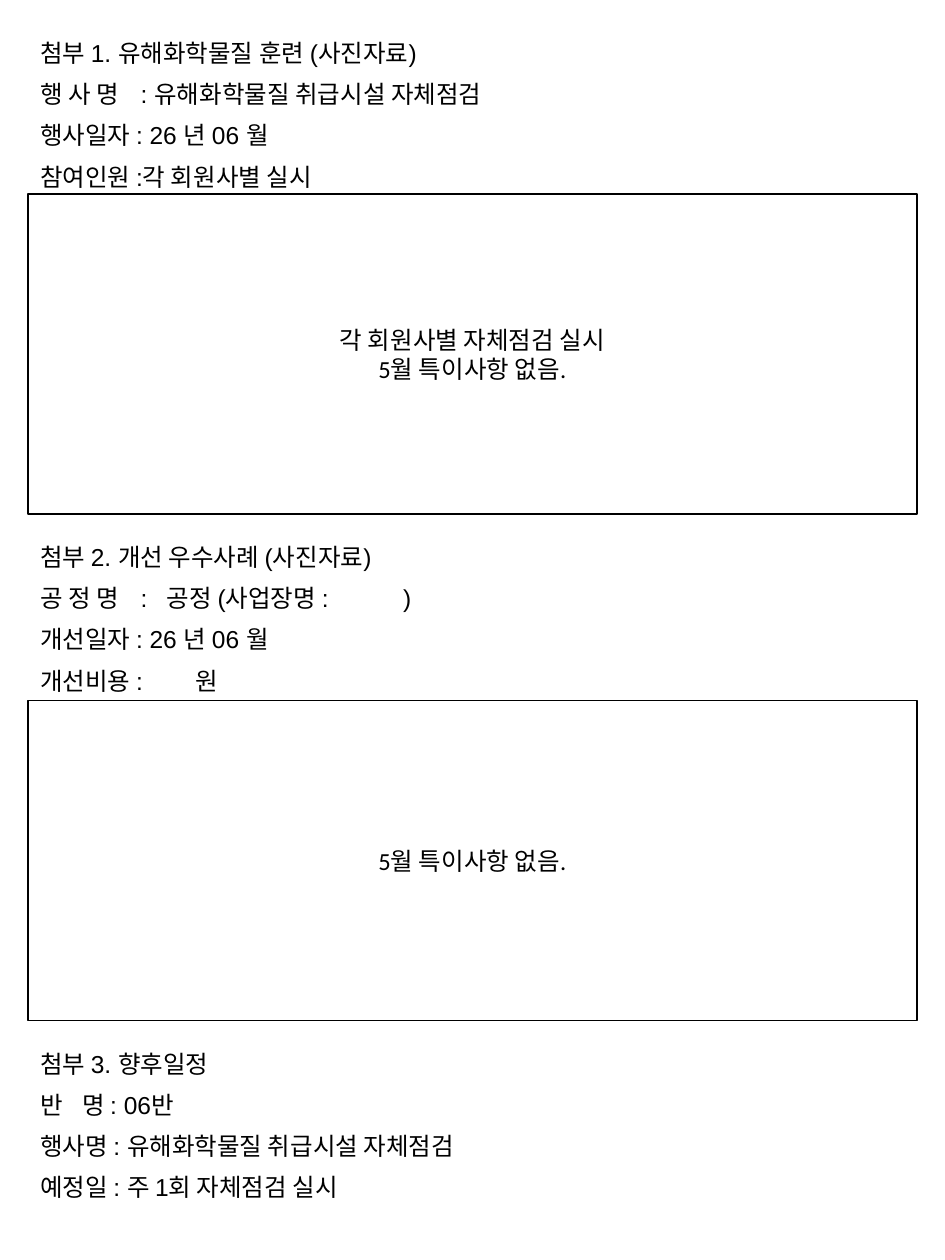
from pptx import Presentation
from pptx.dml.color import RGBColor
from pptx.enum.shapes import MSO_SHAPE as Shape
from pptx.enum.text import MSO_ANCHOR as Anchor, MSO_AUTO_SIZE as AutoSize, PP_ALIGN as Align
from pptx.oxml.ns import qn
from pptx.util import Pt
from lxml.etree import SubElement

LEFT, WIDTH = 15.84, 508.32
TEXT_HEIGHT, BOX_HEIGHT = 102.24, 182.88

SECTIONS = [
    (11.52, [
        ("첨부 1. 유해화학물질 훈련 (사진자료)", []),
        ("행 사 명\t: 유해화학물질 취급시설 자체점검", [57.5]),
        ("행사일자 : 26 년 06 월", []),
        ("참여인원 :각 회원사별 실시", []),
    ]),
    (299.52, [
        ("첨부 2. 개선 우수사례 (사진자료)", []),
        ("공 정 명\t:\t공정 (사업장명 :\t)", [57.5, 72.5, 207.5]),
        ("개선일자 : 26 년 06 월", []),
        ("개선비용 :\t원", [89]),
    ]),
    (588.96, [
        ("첨부 3. 향후일정", []),
        ("반\t명 : 06반", [24]),
        ("행사명 : 유해화학물질 취급시설 자체점검", []),
        ("예정일 : 주 1회 자체점검 실시", []),
    ]),
]

PHOTO_BOXES = [
    (110.88, ["각 회원사별 자체점검 실시", "5월 특이사항 없음."]),
    (400.32, ["5월 특이사항 없음."]),
]


def color(value):
    return RGBColor.from_string(value)


class Report:
    ink = "000000"
    size = 14
    text_font = "Arial"
    box_font = "Calibri"

    def __init__(self, slide):
        self.slide = slide

    def add_run(self, paragraph, text, font_name):
        run = paragraph.add_run()
        run.text = text
        run.font.name = font_name
        run.font.size = Pt(self.size)
        run.font.color.rgb = color(self.ink)

    def add_tabs(self, paragraph, stops):
        tab_list = SubElement(paragraph._p.get_or_add_pPr(), qn("a:tabLst"))
        for stop in stops:
            SubElement(tab_list, qn("a:tab"), pos=str(int(Pt(stop))), algn="l")

    def paragraphs(self, frame, count):
        yield frame.paragraphs[0]
        for _ in range(count - 1):
            yield frame.add_paragraph()

    def section(self, top, lines):
        shape = self.slide.shapes.add_textbox(Pt(LEFT), Pt(top), Pt(WIDTH), Pt(TEXT_HEIGHT))
        frame = shape.text_frame
        frame.word_wrap = True
        frame.auto_size = AutoSize.SHAPE_TO_FIT_TEXT
        for paragraph, (text, stops) in zip(self.paragraphs(frame, len(lines)), lines):
            if stops:
                self.add_tabs(paragraph, stops)
            paragraph.line_spacing = 1.4
            self.add_run(paragraph, text, self.text_font)

    def photo_box(self, top, lines):
        shape = self.slide.shapes.add_shape(
            Shape.RECTANGLE, Pt(LEFT), Pt(top), Pt(WIDTH), Pt(BOX_HEIGHT))
        shape.shadow.inherit = False
        shape.fill.background()
        shape.line.color.rgb = color(self.ink)
        shape.line.width = Pt(1)
        frame = shape.text_frame
        frame.word_wrap = True
        frame.vertical_anchor = Anchor.MIDDLE
        for paragraph, text in zip(self.paragraphs(frame, len(lines)), lines):
            paragraph.alignment = Align.CENTER
            self.add_run(paragraph, text, self.box_font)


def main():
    presentation = Presentation()
    presentation.slide_width = Pt(540)
    presentation.slide_height = Pt(720)
    report = Report(presentation.slides.add_slide(presentation.slide_layouts[6]))
    for top, lines in SECTIONS:
        report.section(top, lines)
    for top, lines in PHOTO_BOXES:
        report.photo_box(top, lines)
    presentation.save("out.pptx")


if __name__ == "__main__":
    main()
